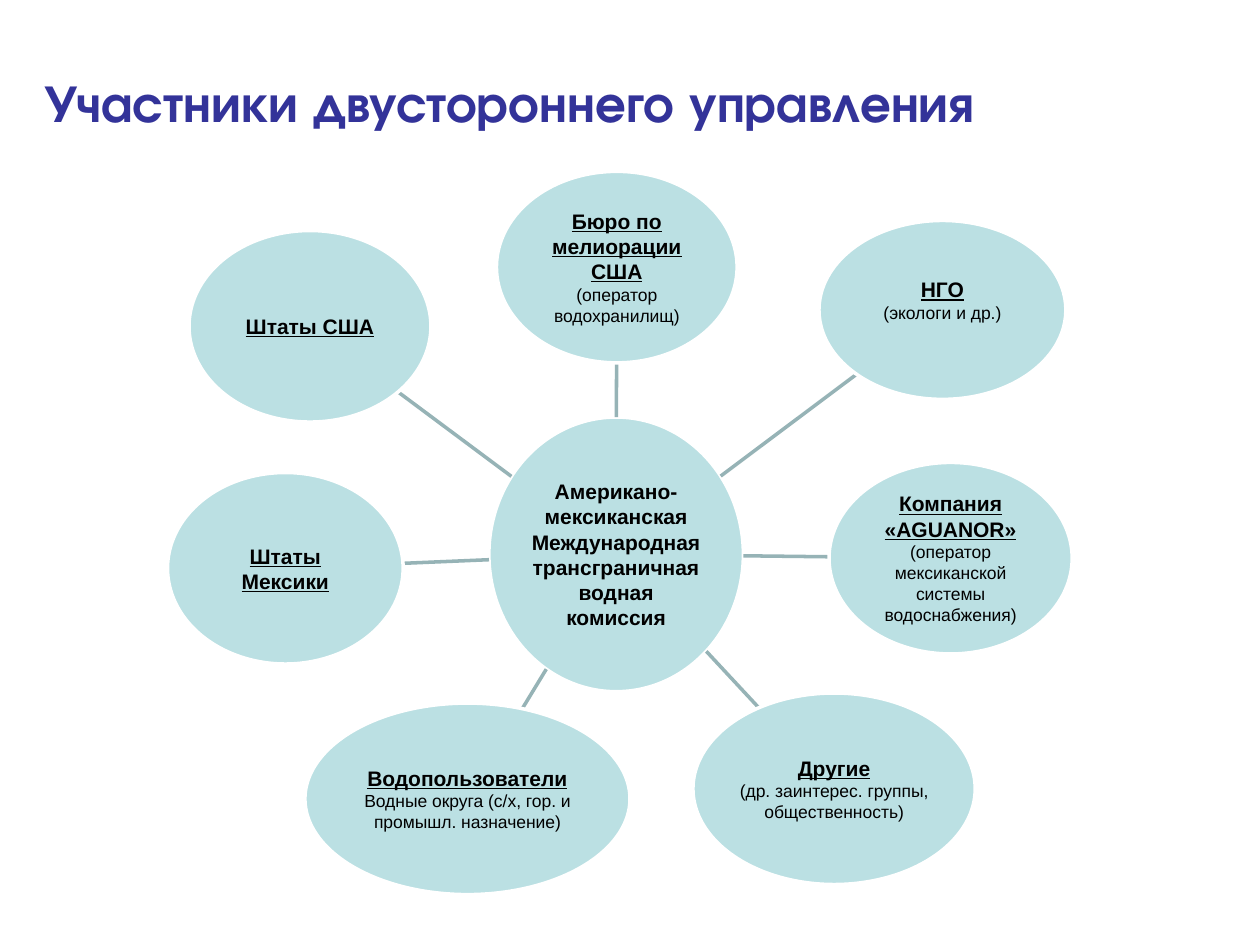
from math import hypot

from lxml import etree
from pptx import Presentation
from pptx.dml.color import RGBColor
from pptx.enum.shapes import MSO_CONNECTOR, MSO_SHAPE
from pptx.enum.text import MSO_ANCHOR, PP_ALIGN
from pptx.oxml.ns import qn
from pptx.util import Inches, Pt

ELLIPSE = MSO_SHAPE.OVAL
STRAIGHT = MSO_CONNECTOR.STRAIGHT
MIDDLE = MSO_ANCHOR.MIDDLE
LEFT, CENTER = PP_ALIGN.LEFT, PP_ALIGN.CENTER
TITLE_ONLY = 5

THEME = {
    "title_font": "TeX Gyre Adventor",
    "body_font": "Arial",
    "title_size": Pt(30),
    "name_size": Pt(12),
    "note_size": Pt(10),
    "line_width": Pt(2),
    "title": RGBColor.from_string("333399"),
    "text": RGBColor.from_string("000000"),
    "ellipse": RGBColor.from_string("BBE0E3"),
    "outline": RGBColor.from_string("FFFFFF"),
    "spoke": RGBColor.from_string("96B3B6"),
}
INSET = 0.01

TITLE = "Участники двустороннего управления"
TITLE_BOX = (0.25, 0.33, 9, 0.95)
HUB = "Американо-мексиканская Международная трансграничная водная комиссия"
HUB_BOX = (3.88, 3.31, 2.02, 2.18)

# name, note, (left, top, width, height), bottom inset
PARTICIPANTS = [
    ("Бюро по мелиорации США", "(оператор водохранилищ)", (3.94, 1.36, 1.91, 1.52), INSET),
    ("НГО", "(экологи и др.)", (6.5, 1.75, 1.96, 1.42), 0.17),
    ("Компания «AGUANOR»", "(оператор мексиканской системы водоснабжения)",
     (6.58, 3.67, 1.93, 1.52), INSET),
    ("Другие", "(др. заинтерес. группы, общественность)", (5.5, 5.5, 2.24, 1.52), INSET),
    ("Штаты Мексики", None, (1.33, 3.75, 1.87, 1.52), INSET),
    ("Водопользователи", "Водные округа (с/х, гор. и промышл. назначение)",
     (2.42, 5.58, 2.58, 1.52), INSET),
    ("Штаты США", None, (1.5, 1.83, 1.92, 1.52), INSET),
]


def center(box):
    left, top, width, height = box
    return left + width / 2, top + height / 2


def edge_point(box, target):
    """Point where the ellipse in box meets the ray from its center to target."""
    x, y = center(box)
    dx, dy = target[0] - x, target[1] - y
    scale = 1 / hypot(dx / (box[2] / 2), dy / (box[3] / 2))
    return x + dx * scale, y + dy * scale


def style_paragraph(para, text, size, bold=False, underline=False):
    para.text = text
    para.alignment = CENTER
    font = para.font
    font.name, font.size, font.bold = THEME["body_font"], size, bold
    font.underline = underline
    font.color.rgb = THEME["text"]


def add_ellipse(slide, box, name, note=None, underline=True, bottom=INSET):
    ellipse = slide.shapes.add_shape(ELLIPSE, *map(Inches, box))
    ellipse.shadow.inherit = False
    ellipse.fill.solid()
    ellipse.fill.fore_color.rgb = THEME["ellipse"]
    ellipse.line.color.rgb = THEME["outline"]
    ellipse.line.width = THEME["line_width"]
    frame = ellipse.text_frame
    frame.word_wrap = True
    frame.vertical_anchor = MIDDLE
    frame.margin_left = frame.margin_right = frame.margin_top = Inches(INSET)
    frame.margin_bottom = Inches(bottom)
    style_paragraph(frame.paragraphs[0], name, THEME["name_size"], True, underline)
    if note:
        style_paragraph(frame.add_paragraph(), note, THEME["note_size"])


def add_spoke(slide, box):
    start = edge_point(HUB_BOX, center(box))
    end = edge_point(box, center(HUB_BOX))
    spoke = slide.shapes.add_connector(STRAIGHT, *map(Inches, start + end))
    spoke.line.color.rgb = THEME["spoke"]
    spoke.line.width = THEME["line_width"]
    etree.SubElement(spoke._element.spPr, qn("a:effectLst"))


def add_title(slide):
    title = slide.shapes.title
    title.left, title.top, title.width, title.height = map(Inches, TITLE_BOX)
    title.text_frame.vertical_anchor = MIDDLE
    para = title.text_frame.paragraphs[0]
    para.text = TITLE
    para.alignment = LEFT
    font = para.font
    font.name, font.size, font.bold = THEME["title_font"], THEME["title_size"], True
    font.color.rgb = THEME["title"]


def main():
    deck = Presentation()
    deck.slide_width, deck.slide_height = Inches(10), Inches(7.5)
    slide = deck.slides.add_slide(deck.slide_layouts[TITLE_ONLY])
    add_title(slide)
    add_ellipse(slide, HUB_BOX, HUB, underline=False)
    for name, note, box, bottom in PARTICIPANTS:
        add_spoke(slide, box)
        add_ellipse(slide, box, name, note, bottom=bottom)
    deck.save("out.pptx")


if __name__ == "__main__":
    main()
